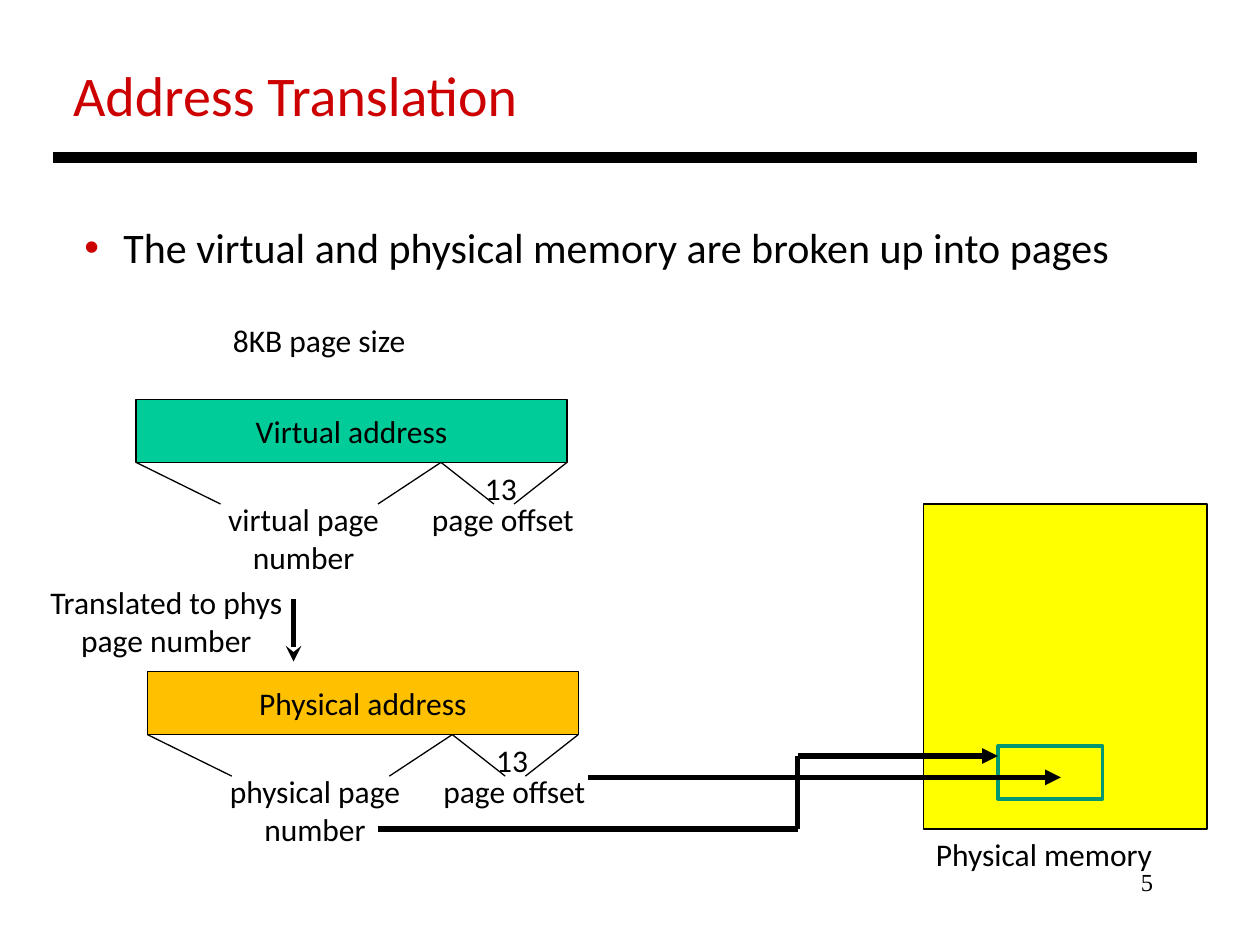
from lxml.etree import SubElement
from pptx import Presentation
from pptx.dml.color import RGBColor
from pptx.enum.shapes import MSO_CONNECTOR, MSO_SHAPE
from pptx.enum.text import MSO_ANCHOR as Anchor, MSO_AUTO_SIZE as AutoSize, PP_ALIGN as Align
from pptx.oxml.ns import qn
from pptx.util import Inches, Pt

COLORS = {"ink": "000000", "red": "CC0000", "green": "00CC99",
          "orange": "FFC000", "yellow": "FFFF00", "teal": "009771"}

TITLE = "Address Translation"
BULLET = "The virtual and physical memory are broken up into pages"
ADDRESSES = [
    {"name": "Virtual address", "page": "virtual page\nnumber",
     "left": 1.08, "top": 3.17, "fill": "green"},
    {"name": "Physical address", "page": "physical page\nnumber",
     "left": 1.17, "top": 5.33, "fill": "orange"},
]
LABELS = [
    ("8KB page size", (1.75, 2.5, 1.59, 0.4), {}),
    ("Translated to phys\npage number", (0.26, 4.58, 2.12, 0.71), {"align": Align.CENTER}),
    ("Physical memory", (7.33, 6.58, 1.93, 0.4), {}),
    ("5", (7.17, 6.83, 2.08, 0.5),
     {"align": Align.RIGHT, "size": 14, "font": "Times New Roman"}),
]
MEMORY = (7.33, 4, 2.25, 2.58)
PAGE_FRAME = (7.92, 5.92, 0.83, 0.42)
ARROWS = [
    ((2.33, 4.75), (2.33, 5.25), "stealth"),
    ((3, 6.58), (6.33, 6.58), None),
    ((6.33, 6.58), (6.33, 6), None),
    ((6.33, 6), (7.92, 6), "triangle"),
    ((4.67, 6.17), (8.42, 6.17), "triangle"),
]

BAR_WIDTH, BAR_HEIGHT, SPLIT, FAN_HEIGHT = 3.42, 0.5, 2.42, 0.33
FAN = [(0, 0.67), (SPLIT, 1.92), (SPLIT, 2.84), (BAR_WIDTH, 3)]
PAGE_CENTER, PAGE_WIDTH = 1.33, 1.57


def rgb(color):
    """Return the named colour."""
    return RGBColor.from_string(COLORS[color])


def write(box, text, align=Align.LEFT, size=18, font="Calibri", color="ink", anchor=Anchor.TOP):
    """Fill a box with formatted text."""
    frame = box.text_frame
    frame.text = text
    frame_format = {"word_wrap": False, "auto_size": AutoSize.NONE, "vertical_anchor": anchor}
    for key, value in frame_format.items():
        setattr(frame, key, value)
    for paragraph in frame.paragraphs:
        for key, value in {"alignment": align, "space_before": Pt(0)}.items():
            setattr(paragraph, key, value)
        for key, value in {"name": font, "size": Pt(size)}.items():
            setattr(paragraph.font, key, value)
        paragraph.font.color.rgb = rgb(color)


def place(placeholder, area):
    """Move a placeholder to an area."""
    for key, value in zip(("left", "top", "width", "height"), area):
        setattr(placeholder, key, Inches(value))


def add_label(slide, text, area, **style):
    """Add a text label."""
    write(slide.shapes.add_textbox(*map(Inches, area)), text, **style)


def add_box(slide, area, fill, line="ink", width=0.75):
    """Add an outlined rectangle."""
    box = slide.shapes.add_shape(MSO_SHAPE.RECTANGLE, *map(Inches, area))
    box.shadow.inherit = False
    box.fill.solid()
    box.fill.fore_color.rgb = rgb(fill)
    box.line.color.rgb = rgb(line)
    box.line.width = Pt(width)
    return box


def add_line(slide, start, end, width=0.75, head=None):
    """Add a straight line with an optional arrowhead."""
    line = slide.shapes.add_connector(MSO_CONNECTOR.STRAIGHT, *map(Inches, start + end))
    line.line.color.rgb = rgb("ink")
    line.line.width = Pt(width)
    if head:
        SubElement(line.line._get_or_add_ln(), qn("a:tailEnd"), type=head)
    SubElement(line._element.spPr, qn("a:effectLst"))


def add_bullet(paragraph):
    """Give a paragraph a hanging red bullet."""
    properties = paragraph._p.get_or_add_pPr()
    hang = Inches(0.31)
    properties.set("marL", str(hang))
    properties.set("indent", str(-hang))
    bullet_color = SubElement(properties, qn("a:buClr"))
    SubElement(bullet_color, qn("a:srgbClr"), val=COLORS["red"])
    SubElement(properties, qn("a:buChar"), char="•")
    for run_defaults in properties.findall(qn("a:defRPr")):
        properties.append(run_defaults)


def add_address(slide, name, page, left, top, fill):
    """Draw an address bar split into page number and offset."""
    bar = add_box(slide, (left, top, BAR_WIDTH, BAR_HEIGHT), fill)
    write(bar, name, align=Align.CENTER, anchor=Anchor.MIDDLE)
    bottom = top + BAR_HEIGHT
    for start, end in FAN:
        add_line(slide, (left + start, bottom), (left + end, bottom + FAN_HEIGHT))
    page_left = left + PAGE_CENTER - PAGE_WIDTH / 2
    add_label(slide, page, (page_left, bottom + 0.25, PAGE_WIDTH, 0.71), align=Align.CENTER)
    add_label(slide, "page offset", (left + 2.25, bottom + 0.25, 1.35, 0.4))
    add_label(slide, "13", (left + 2.67, bottom, 0.46, 0.4))


def main():
    """Build the address translation slide."""
    deck = Presentation()
    deck.slide_width, deck.slide_height = Inches(10), Inches(7.5)
    slide = deck.slides.add_slide(deck.slide_layouts[1])
    title, body = slide.placeholders
    place(title, (0.48, 0.43, 3.77, 0.64))
    write(title, TITLE, size=32, color="red")
    place(body, (0.57, 1.71, 8.34, 0.5))
    write(body, BULLET, size=24)
    add_bullet(body.text_frame.paragraphs[0])
    add_line(slide, (0.42, 1.25), (9.5, 1.25), width=6)
    for address in ADDRESSES:
        add_address(slide, **address)
    for text, area, style in LABELS:
        add_label(slide, text, area, **style)
    add_box(slide, MEMORY, "yellow")
    add_box(slide, PAGE_FRAME, "yellow", line="teal", width=2)
    for start, end, head in ARROWS:
        add_line(slide, start, end, width=3, head=head)
    deck.save("out.pptx")


if __name__ == "__main__":
    main()
